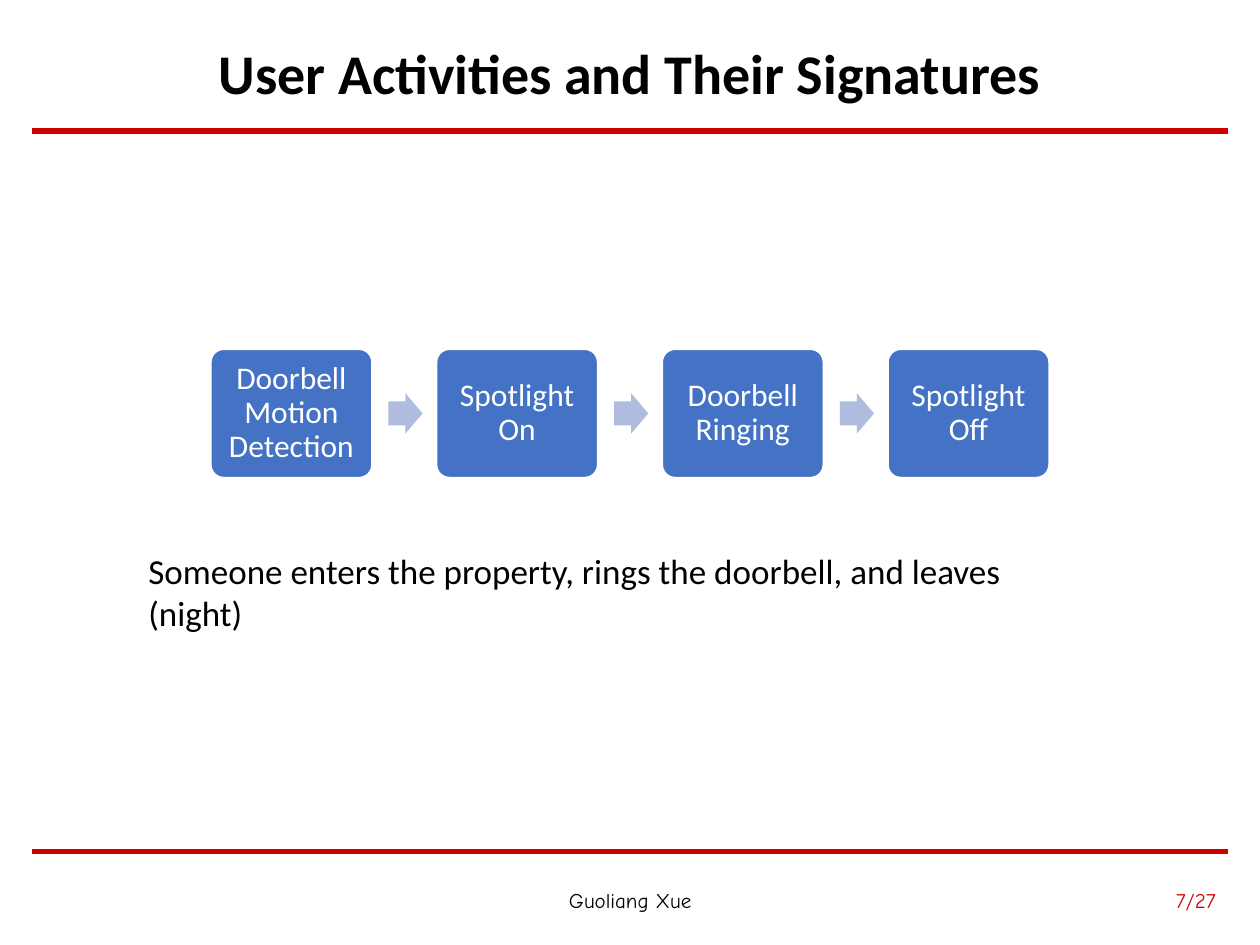
"""Build a slide showing the event sequence of a night-time doorbell visit."""
from lxml.etree import SubElement
from pptx import Presentation
from pptx.dml.color import RGBColor
from pptx.enum.shapes import MSO_CONNECTOR, MSO_SHAPE
from pptx.enum.text import MSO_ANCHOR, MSO_AUTO_SIZE, PP_ALIGN
from pptx.oxml.ns import qn
from pptx.util import Cm, Pt


def color(hex_text):
    return RGBColor.from_string(hex_text)


def write(shape, text, size, font, ink, align, anchor, spacing=1.0, bold=False):
    frame = shape.text_frame
    frame.word_wrap = True
    frame.auto_size = MSO_AUTO_SIZE.NONE
    frame.vertical_anchor = anchor
    paragraph = frame.paragraphs[0]
    paragraph.alignment = align
    paragraph.line_spacing = spacing
    span = paragraph.add_run()
    span.text = text
    span.font.size = Pt(size)
    span.font.name = font
    span.font.bold = bold
    span.font.color.rgb = color(ink)


deck = Presentation()
deck.slide_width, deck.slide_height = Cm(25.4), Cm(19.05)
page = deck.slides.add_slide(deck.slide_layouts[5])

for rule_top in (2.64, 17.17):
    rule = page.shapes.add_connector(
        MSO_CONNECTOR.STRAIGHT, Cm(0.65), Cm(rule_top), Cm(24.75), Cm(rule_top)
    )
    rule.line.color.rgb = color("CC0000")
    rule.line.width = Pt(3)
    SubElement(rule.element.spPr, qn("a:effectLst"))

title = page.shapes.title
title.left, title.top, title.width, title.height = Cm(0.65), Cm(0.71), Cm(24.1), Cm(1.65)
write(title, "User Activities and Their Signatures", 32, "Calibri", "000000",
      PP_ALIGN.CENTER, MSO_ANCHOR.MIDDLE, 0.9, True)

steps = ["Doorbell Motion Detection", "Spotlight On", "Doorbell Ringing", "Spotlight Off"]
flow = page.shapes.add_group_shape()
for index, step in enumerate(steps):
    left = 4.25 + index * 4.55
    box = flow.shapes.add_shape(
        MSO_SHAPE.ROUNDED_RECTANGLE, Cm(left), Cm(7.04), Cm(3.25), Cm(2.59)
    )
    box.adjustments[0] = 0.1
    box.shadow.inherit = False
    box.fill.solid()
    box.fill.fore_color.rgb = color("4472C4")
    box.line.color.rgb = color("FFFFFF")
    box.line.width = Pt(1)
    frame = box.text_frame
    frame.margin_left = frame.margin_right = Cm(0.25)
    frame.margin_top = frame.margin_bottom = Cm(0.25)
    write(box, step, 18, "Calibri", "FFFFFF", PP_ALIGN.CENTER, MSO_ANCHOR.MIDDLE, 0.9)
    if index < len(steps) - 1:
        arrow = flow.shapes.add_shape(
            MSO_SHAPE.RIGHT_ARROW, Cm(left + 3.58), Cm(7.93), Cm(0.69), Cm(0.81)
        )
        arrow.adjustments[0] = 0.6
        arrow.adjustments[1] = 0.5
        arrow.shadow.inherit = False
        arrow.fill.solid()
        arrow.fill.fore_color.rgb = color("B0BCDE")
        arrow.line.fill.background()

caption = page.shapes.add_textbox(Cm(2.74), Cm(10.95), Cm(19.74), Cm(1.12))
write(caption, "Someone enters the property, rings the doorbell, and leaves (night)",
      20, "Calibri", "000000", PP_ALIGN.LEFT, MSO_ANCHOR.TOP)

author = page.shapes.add_textbox(Cm(8.41), Cm(17.53), Cm(8.59), Cm(1.22))
write(author, "Guoliang Xue", 12, "Comic Neue", "000000", PP_ALIGN.CENTER, MSO_ANCHOR.MIDDLE)

page_number = page.shapes.add_textbox(Cm(17.27), Cm(17.53), Cm(7.49), Cm(1.22))
write(page_number, "7/27", 12, "Comic Neue", "CD0000", PP_ALIGN.RIGHT, MSO_ANCHOR.MIDDLE)

deck.save("out.pptx")
